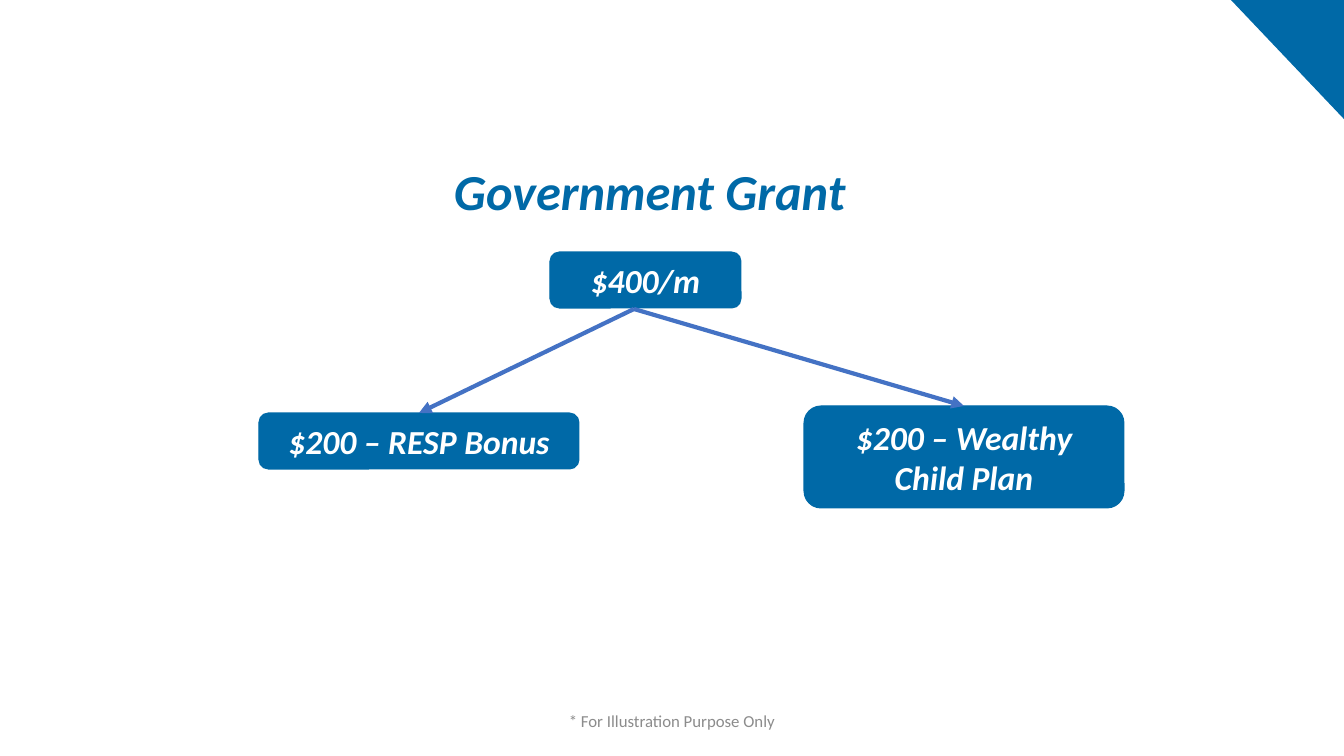
from pptx import Presentation
from pptx.dml.color import RGBColor
from pptx.enum.shapes import MSO_CONNECTOR, MSO_SHAPE
from pptx.enum.text import MSO_ANCHOR, PP_ALIGN
from pptx.oxml.ns import qn
from pptx.util import Pt
from lxml.etree import SubElement

PX = 914400 / 100.8
BRAND_BLUE = RGBColor(0x00, 0x69, 0xA7)
ARROW_BLUE = RGBColor(0x44, 0x72, 0xC4)
WHITE = RGBColor(0xFF, 0xFF, 0xFF)
GREY = RGBColor(0x8C, 0x8C, 0x8C)
TOP = 0


def emu(*lengths):
    return [round(length * PX) for length in lengths]


class GrantSlide:
    font_name = "Calibri"

    def __init__(self, presentation):
        self.slide = presentation.slides.add_slide(presentation.slide_layouts[6])
        self.shapes = self.slide.shapes

    def set_text(self, shape, text, size, color, align, anchor, strong):
        frame = shape.text_frame
        frame.word_wrap = True
        frame.vertical_anchor = anchor
        paragraph = frame.paragraphs[0]
        paragraph.alignment = align
        run = paragraph.add_run()
        run.text = text
        run.font.color.rgb = color
        style = {"name": self.font_name, "size": Pt(size), "bold": strong, "italic": strong}
        for attribute, value in style.items():
            setattr(run.font, attribute, value)

    def label(self, text, bounds, size, color, align=PP_ALIGN.LEFT,
              anchor=MSO_ANCHOR.TOP, strong=False):
        box = self.shapes.add_textbox(*emu(*bounds))
        self.set_text(box, text, size, color, align, anchor, strong)

    def paint(self, shape):
        shape.shadow.inherit = False
        shape.fill.solid()
        shape.fill.fore_color.rgb = BRAND_BLUE

    def amount(self, text, bounds):
        box = self.shapes.add_shape(MSO_SHAPE.ROUNDED_RECTANGLE, *emu(*bounds))
        self.paint(box)
        box.line.color.rgb = BRAND_BLUE
        box.line.width = Pt(0.75)
        self.set_text(box, text, 24, WHITE, PP_ALIGN.CENTER, MSO_ANCHOR.MIDDLE, True)
        return box

    def arrow(self, start, target):
        arrow = self.shapes.add_connector(MSO_CONNECTOR.STRAIGHT, *emu(*start, *start))
        arrow.end_connect(target, TOP)
        arrow.line.color.rgb = ARROW_BLUE
        arrow.line.width = Pt(3)
        properties = arrow.element.spPr
        SubElement(properties.find(qn("a:ln")), qn("a:tailEnd"), type="triangle")
        SubElement(properties, qn("a:effectLst"))

    def corner(self, first, *others):
        builder = self.shapes.build_freeform(*first, scale=PX)
        builder.add_line_segments(others, close=True)
        triangle = builder.convert_to_shape()
        self.paint(triangle)
        triangle.line.fill.background()


def main():
    presentation = Presentation()
    presentation.slide_width, presentation.slide_height = emu(1344, 756)
    grant = GrantSlide(presentation)

    # Heading
    grant.label("Government Grant", (444, 155, 423, 72), 36, BRAND_BLUE, strong=True)

    # Monthly grant and its two uses
    grant.amount("$400/m", (550, 252, 191, 56))
    uses = [
        ("$200 – RESP Bonus", (259, 413, 320, 56)),
        ("$200 – Wealthy Child Plan", (804, 406, 320, 102)),
    ]
    for text, bounds in uses:
        grant.arrow((634, 309), grant.amount(text, bounds))

    # Corner accent
    grant.corner((1231, 0), (1344, 0), (1344, 119))

    # Disclaimer
    grant.label("* For Illustration Purpose Only", (445, 701, 454, 40), 12, GREY,
                PP_ALIGN.CENTER, MSO_ANCHOR.MIDDLE)

    presentation.save("out.pptx")


if __name__ == "__main__":
    main()
